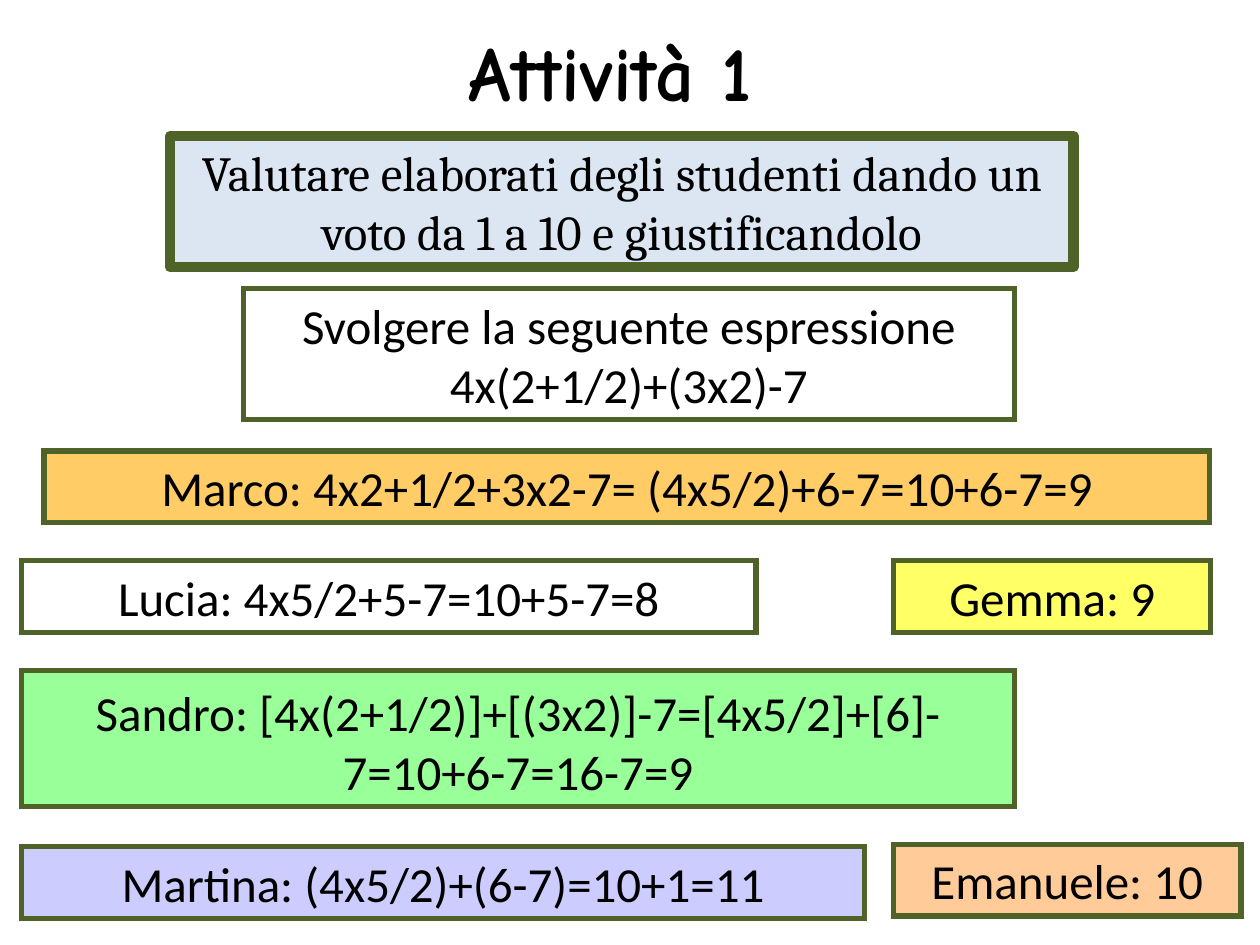
from dataclasses import dataclass

from lxml import etree
from pptx import Presentation
from pptx.dml.color import RGBColor
from pptx.enum.shapes import MSO_SHAPE
from pptx.enum.text import MSO_ANCHOR, MSO_AUTO_SIZE, PP_ALIGN
from pptx.oxml.ns import qn
from pptx.util import Inches, Pt

RECTANGLE = MSO_SHAPE.RECTANGLE
TOP, MIDDLE, BOTTOM = MSO_ANCHOR.TOP, MSO_ANCHOR.MIDDLE, MSO_ANCHOR.BOTTOM
GROW = MSO_AUTO_SIZE.SHAPE_TO_FIT_TEXT
CENTER = PP_ALIGN.CENTER


@dataclass(frozen=True)
class Theme:
    ink: str = "000000"
    border: str = "4F6228"
    blue: str = "DCE6F2"
    orange: str = "FFCC66"
    white: str = "FFFFFF"
    yellow: str = "FFFF66"
    green: str = "99FF99"
    lilac: str = "CCCCFF"
    peach: str = "FFCC99"
    title_font: str = "Comic Neue"
    task_font: str = "Cambria"
    body_font: str = "Calibri"
    title_size: int = 44
    body_size: int = 28


class SlideBuilder:
    def __init__(self, page, theme):
        self.page = page
        self.theme = theme

    def set_text(self, box, text, font, size, anchor, bold=False):
        frame = box.text_frame
        frame.word_wrap = True
        frame.vertical_anchor = anchor
        para = frame.paragraphs[0]
        para.text = text
        para.alignment = CENTER
        para.font.name = font
        para.font.size = Pt(size)
        para.font.bold = bold
        para.font.color.rgb = RGBColor.from_string(self.theme.ink)
        return frame, para

    def title(self, text, bounds):
        box = self.page.shapes.add_textbox(*map(Inches, bounds))
        _, para = self.set_text(box, text, self.theme.title_font,
                                self.theme.title_size, MIDDLE, bold=True)
        para.line_spacing = 0.93

    def panel(self, text, bounds, fill, font, border, anchor):
        box = self.page.shapes.add_shape(RECTANGLE, *map(Inches, bounds))
        box.shadow.inherit = False
        if fill:
            box.fill.solid()
            box.fill.fore_color.rgb = RGBColor.from_string(fill)
        else:
            box.fill.background()
        box.line.color.rgb = RGBColor.from_string(self.theme.border)
        box.line.width = Pt(border)
        frame, _ = self.set_text(box, text, font, self.theme.body_size, anchor)
        frame.auto_size = GROW
        return box

    def task(self, text, bounds):
        self.panel(text, bounds, self.theme.blue, self.theme.task_font, 6, TOP)

    def answer(self, text, bounds, fill):
        box = self.panel(text, bounds, fill, self.theme.body_font, 3, BOTTOM)
        outline = box.element.spPr.find(qn("a:ln"))
        etree.SubElement(outline, qn("a:miter"), lim="800000")


def main():
    deck = Presentation()
    deck.slide_width, deck.slide_height = Inches(10), Inches(7.5)
    theme = Theme()
    builder = SlideBuilder(deck.slides.add_slide(deck.slide_layouts[6]), theme)

    builder.title("Attività 1", (0.9, 0.14, 7.89, 0.92))
    builder.task("Valutare elaborati degli studenti dando un voto da 1 a 10 "
                 "e giustificandolo", (1.35, 1.08, 7.17, 1.04))

    left, right, row = 0.17, 7.09, 0.57
    answers = [
        ("Svolgere la seguente espressione 4x(2+1/2)+(3x2)-7",
         (1.93, 2.29, 6.12, 1.04), None),
        ("Marco: 4x2+1/2+3x2-7= (4x5/2)+6-7=10+6-7=9",
         (0.35, 3.58, 9.25, row), theme.orange),
        ("Lucia: 4x5/2+5-7=10+5-7=8", (left, 4.45, 5.83, row), theme.white),
        ("Gemma: 9", (right, 4.45, 2.52, row), theme.yellow),
        ("Sandro: [4x(2+1/2)]+[(3x2)]-7=[4x5/2]+[6]-7=10+6-7=16-7=9",
         (left, 5.32, 7.88, 1.08), theme.green),
        ("Martina: (4x5/2)+(6-7)=10+1=11",
         (left, 6.72, 6.69, row), theme.lilac),
        ("Emanuele: 10", (right, 6.7, 2.76, row), theme.peach),
    ]
    for text, bounds, fill in answers:
        builder.answer(text, bounds, fill)

    deck.save("out.pptx")


if __name__ == "__main__":
    main()
